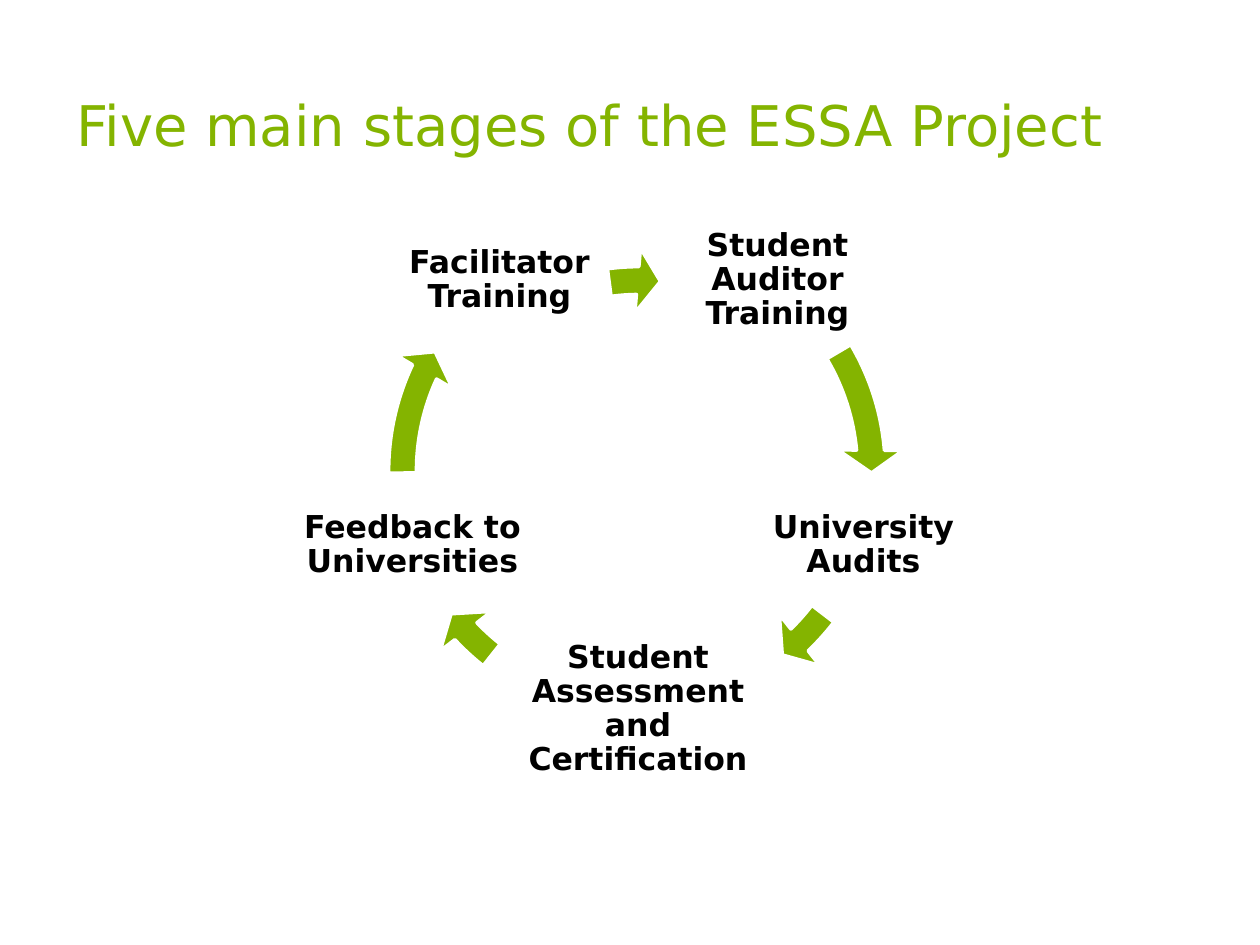
import pptx
import pptx.dml.color
import pptx.enum.shapes
import pptx.enum.text
import pptx.util

PX = 914400 / 126
FONT = "DejaVu Sans"
GREEN, BLACK, WHITE = "84B400", "000000", "FFFFFF"

# Ring of arrows: box side, band width, head angle and head width
SIDE, BAND, HEAD, FLARE = 534, 0.052, 5.59, 0.061

# Stage text, box left, top, width
STAGES = [
    ("Student Auditor Training", 659, 209, 237),
    ("University Audits", 759, 474, 209),
    ("Student Assessment and Certification", 491, 638, 294),
    ("Feedback to Universities", 292, 474, 241),
    ("Facilitator Training", 391, 209, 217),
]
TALL = 142

# Arrow box left, top, then start and end angle in degrees
ARROWS = [
    (370, 204, 329.41, 354.91),
    (370, 204, 37.53, 46.11),
    (370, 204, 128.3, 136.88),
    (370, 204, 179.5, 204.99),
    (373, 248, 262.47, 269.43),
]


def px(n):
    return pptx.util.Emu(round(n * PX))


def color(code):
    return pptx.dml.color.RGBColor.from_string(code)


def angle(deg):
    """Turn degrees into the unit of shape adjustments."""
    return deg * 0.6


def label(shapes, text, left, top, width, height, size, code, bold=False):
    """Add a wrapped, vertically centred text box; return its frame."""
    box = shapes.add_textbox(px(left), px(top), px(width), px(height))
    frame = box.text_frame
    frame.word_wrap = True
    frame.vertical_anchor = pptx.enum.text.MSO_ANCHOR.MIDDLE
    frame.text = text
    font = frame.paragraphs[0].runs[0].font
    font.name, font.size, font.bold = FONT, pptx.util.Pt(size), bold
    font.color.rgb = color(code)
    return frame


def stage(shapes, text, left, top, width):
    frame = label(shapes, text, left, top, width, TALL, 18, BLACK, True)
    frame.margin_left = frame.margin_right = px(4)
    frame.margin_top = frame.margin_bottom = px(4)
    para = frame.paragraphs[0]
    para.alignment = pptx.enum.text.PP_ALIGN.CENTER
    para.line_spacing = 0.9


def arrow(shapes, left, top, start, end):
    kind = pptx.enum.shapes.MSO_SHAPE.CIRCULAR_ARROW
    shape = shapes.add_shape(kind, px(left), px(top), px(SIDE), px(SIDE))
    values = (BAND, angle(HEAD), angle(end), angle(start), FLARE)
    for i, value in enumerate(values):
        shape.adjustments[i] = value
    shape.shadow.inherit = False
    shape.fill.solid()
    shape.fill.fore_color.rgb = color(GREEN)
    shape.line.color.rgb = color(WHITE)
    shape.line.width = pptx.util.Pt(2)


def main():
    deck = pptx.Presentation()
    deck.slide_width, deck.slide_height = px(1260), px(945)
    slide = deck.slides.add_slide(deck.slide_layouts[6])

    # Title
    label(slide.shapes, "Five main stages of the ESSA Project",
          64, 45, 1101, 158, 32, GREEN)

    # Cycle of stages, each followed by its arrow
    cycle = slide.shapes.add_group_shape().shapes
    for step, turn in zip(STAGES, ARROWS):
        stage(cycle, *step)
        arrow(cycle, *turn)

    deck.save("out.pptx")


if __name__ == "__main__":
    main()
